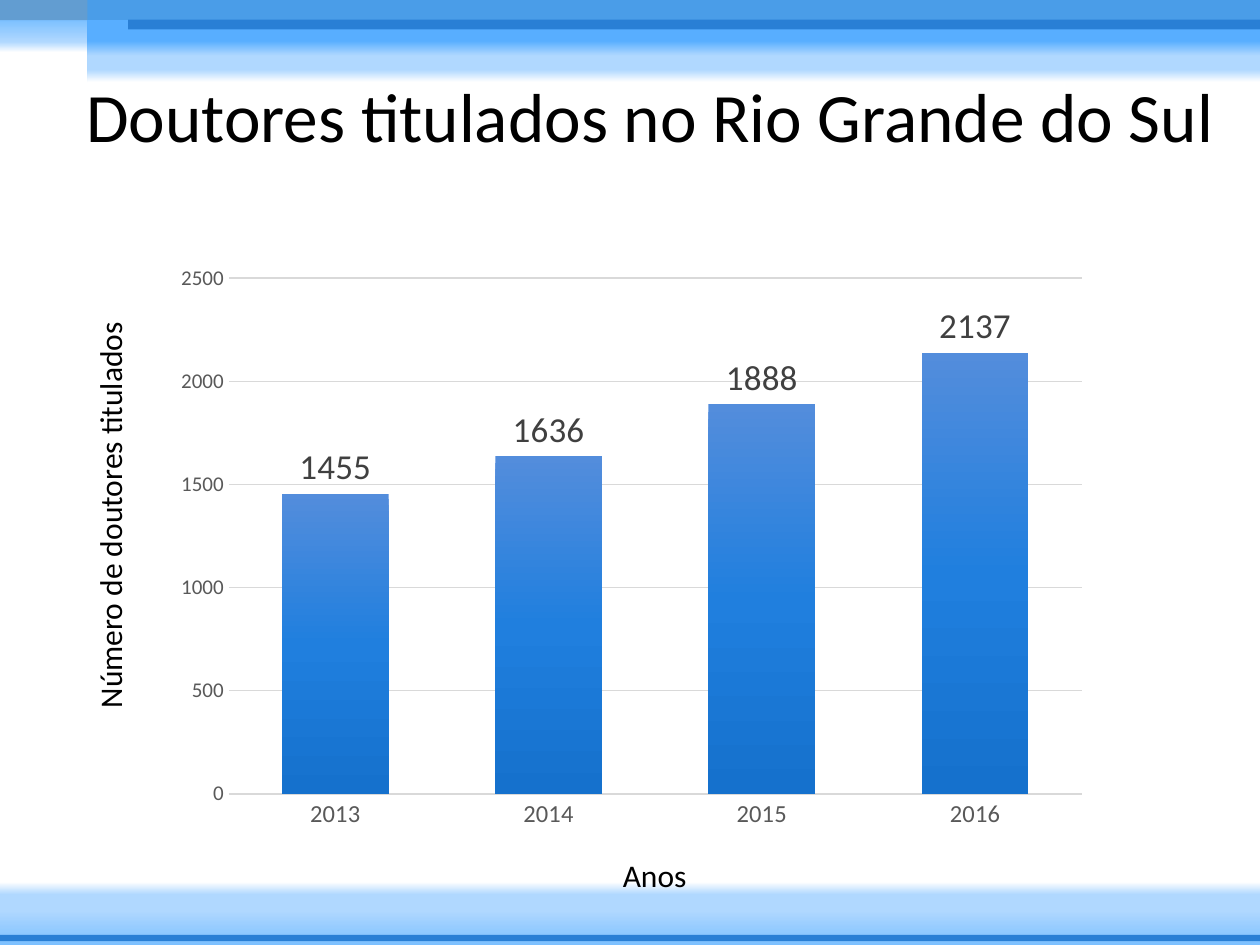
from lxml import etree
from pptx import Presentation
from pptx.chart.data import CategoryChartData
from pptx.dml.color import RGBColor
from pptx.enum.chart import XL_CHART_TYPE, XL_LABEL_POSITION, XL_TICK_MARK
from pptx.enum.shapes import MSO_SHAPE
from pptx.enum.text import MSO_ANCHOR, PP_ALIGN
from pptx.oxml import parse_xml
from pptx.oxml.ns import nsdecls, qn
from pptx.util import Pt

RECT = MSO_SHAPE.RECTANGLE
COLUMN = XL_CHART_TYPE.COLUMN_CLUSTERED
NO_TICK = XL_TICK_MARK.NONE
OUTSIDE = XL_LABEL_POSITION.OUTSIDE_END
LEFT, CENTER = PP_ALIGN.LEFT, PP_ALIGN.CENTER
TOP, MIDDLE = MSO_ANCHOR.TOP, MSO_ANCHOR.MIDDLE
FONT = "Calibri"
COLORS = {
    "white": "FFFFFF", "black": "000000", "strip": "629DD1", "line": "297FD5",
    "sky": "4A9DE8", "bright": "58AEFF", "soft": "7CC0FF", "pale": "B0D8FF",
    "grid": "D9D9D9", "axis": "595959", "label": "404040",
    "bar_top": "538DDC", "bar_mid": "207FDE", "bar_end": "1571CD",
}


def set_gradient(fill, element, stops):
    fill.gradient()
    fill.gradient_angle = 270
    gs_list = element.find(".//" + qn("a:gsLst"))
    for gs in list(gs_list):
        gs_list.remove(gs)
    for pos, color in stops:
        gs = etree.SubElement(gs_list, qn("a:gs"), pos=str(pos * 1000))
        etree.SubElement(gs, qn("a:srgbClr"), val=COLORS[color])


def set_font(font, size, color):
    font.name = FONT
    font.size = Pt(size)
    font.bold = False
    font.color.rgb = RGBColor.from_string(COLORS[color])


prs = Presentation()
prs.slide_width, prs.slide_height = Pt(720), Pt(540)
s = prs.slides.add_slide(prs.slide_layouts[6])

top_fade = [(0, "sky"), (24, "sky"), (25, "bright"), (50, "bright"),
            (68, "pale"), (85, "pale"), (100, "white")]
corner_fade = [(0, "soft"), (38, "soft"), (80, "pale"), (100, "white")]
bottom_fade = [(0, "white"), (20, "pale"), (45, "pale"), (100, "soft")]
bands = [
    (0, 0, 60, 30, corner_fade),
    (0, 0, 720, 11.5, "strip"),
    (50, 0, 670, 47, top_fade),
    (0, 504, 720, 36, bottom_fade),
    (73.2, 11.3, 646.8, 5.5, "line"),
    (0, 534.2, 720, 3.6, "line"),
]
for x, y, w, h, paint in bands:
    sp = s.shapes.add_shape(RECT, Pt(x), Pt(y), Pt(w), Pt(h))
    sp.shadow.inherit = False
    sp.line.fill.background()
    if isinstance(paint, list):
        set_gradient(sp.fill, sp._element, paint)
    else:
        sp.fill.solid()
        sp.fill.fore_color.rgb = RGBColor.from_string(COLORS[paint])

data = CategoryChartData()
data.categories = ["2013", "2014", "2015", "2016"]
data.add_series("Series 1", [1455, 1636, 1888, 2137])
chart = s.shapes.add_chart(COLUMN, Pt(93.2), Pt(145.6), Pt(535.7), Pt(334.8), data).chart
chart.has_title = False
chart.has_legend = False
set_font(chart.font, 10, "black")

plot = chart.plots[0]
plot.gap_width = 100
plot.overlap = -24
plot.vary_by_categories = False
plot.has_data_labels = True
labels = plot.data_labels
labels.show_value = True
labels.position = OUTSIDE
set_font(labels.font, 20, "label")
series = plot.series[0]
set_gradient(series.format.fill, series._element,
             [(0, "bar_top"), (50, "bar_mid"), (100, "bar_end")])

for axis, size in ((chart.category_axis, 14), (chart.value_axis, 12)):
    axis.major_tick_mark = axis.minor_tick_mark = NO_TICK
    set_font(axis.tick_labels.font, size, "axis")
val_axis = chart.value_axis
val_axis.minimum_scale, val_axis.maximum_scale, val_axis.major_unit = 0, 2500, 500
val_axis.format.line.fill.background()
for line, width in ((chart.category_axis.format.line, 1),
                    (val_axis.major_gridlines.format.line, 0.75)):
    line.color.rgb = RGBColor.from_string(COLORS["grid"])
    line.width = Pt(width)

plot_area = chart._chartSpace.chart.plotArea
for layout in plot_area.findall(qn("c:layout")):
    plot_area.remove(layout)
bounds = {"x": 0.07, "y": 0.04, "w": 0.91, "h": 0.88}
parts = "".join(f'<c:{k} val="{v}"/>' for k, v in bounds.items())
plot_area.insert(0, parse_xml(
    f'<c:layout {nsdecls("c")}><c:manualLayout><c:layoutTarget val="inner"/>'
    f'<c:xMode val="edge"/><c:yMode val="edge"/>{parts}</c:manualLayout></c:layout>'))

texts = [
    ("Doutores titulados no Rio Grande do Sul", 37, 20.6, 668.9, 90, 39.6, CENTER, MIDDLE, 0),
    ("Anos", 348.8, 485.6, 221, 29, 18, LEFT, TOP, 0),
    ("Número de doutores titulados", -59.2, 275.3, 244, 29, 18, LEFT, TOP, 270),
]
for text, x, y, w, h, size, align, anchor, angle in texts:
    sp = s.shapes.add_textbox(Pt(x), Pt(y), Pt(w), Pt(h))
    sp.rotation = angle
    tf = sp.text_frame
    tf.word_wrap = True
    tf.vertical_anchor = anchor
    tf.text = text
    p = tf.paragraphs[0]
    p.alignment = align
    set_font(p.runs[0].font, size, "black")

prs.save("out.pptx")
